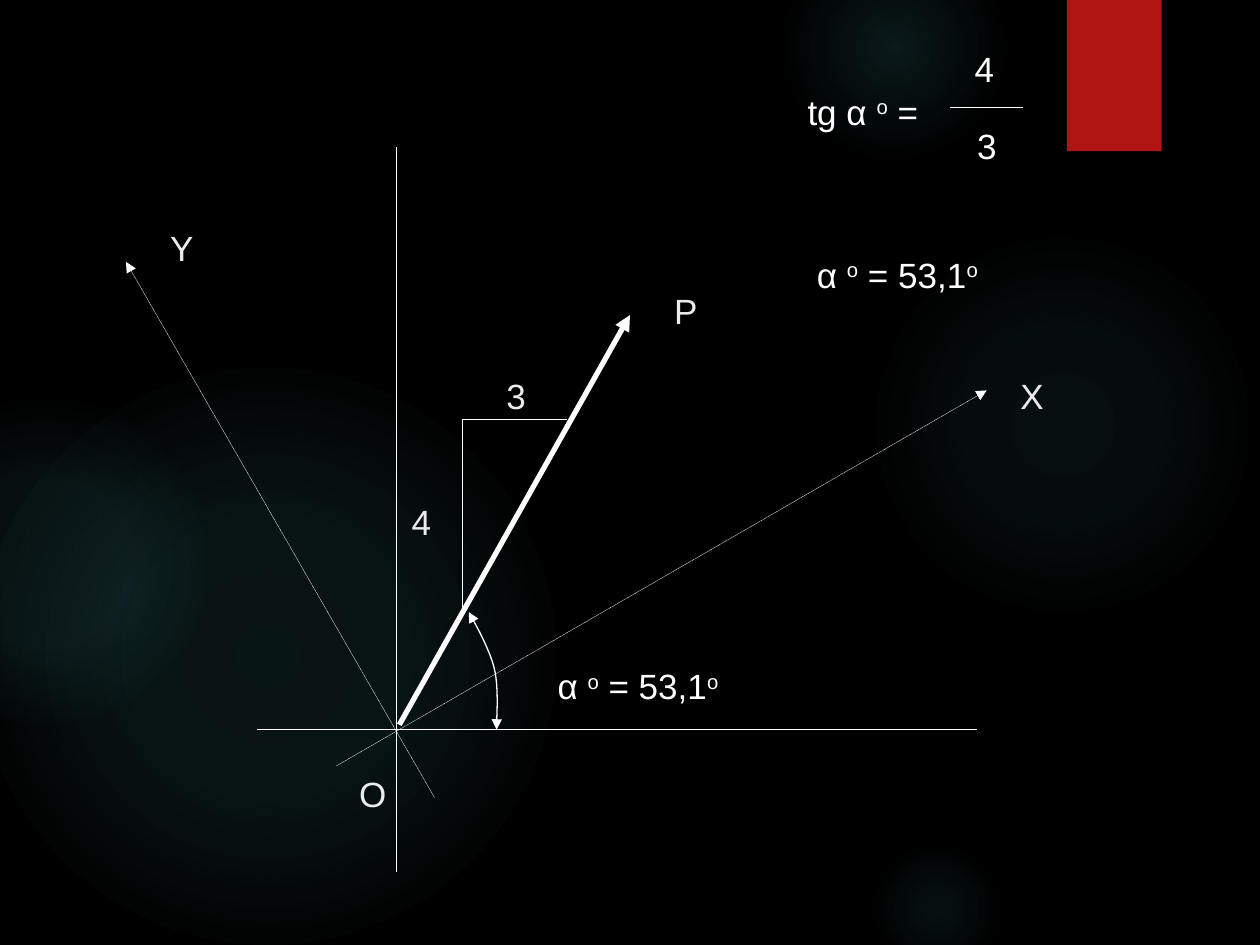
from dataclasses import dataclass

from pptx import Presentation
from pptx.dml.color import RGBColor
from pptx.enum.dml import MSO_LINE
from pptx.enum.shapes import MSO_CONNECTOR, MSO_SHAPE
from pptx.enum.text import MSO_AUTO_SIZE, PP_ALIGN
from pptx.oxml import parse_xml
from pptx.oxml.ns import nsdecls, qn
from pptx.slide import Slide
from pptx.util import Cm, Pt
from lxml.etree import SubElement

COLORS = {
    "background": "000000",
    "glow": "50B9C1",
    "ribbon": "B01513",
    "line": "FFFFFF",
    "formula": "FFFFFF",
    "label": "EBEBEB",
}
FONT = "Arial"
TEXT_HEIGHT = 1.09
ARC_STEPS = 12


@dataclass(frozen=True)
class Glow:
    left: float
    top: float
    diameter: float
    center_alpha: int
    middle_alpha: int
    edge: int


@dataclass(frozen=True)
class Line:
    start: tuple[float, float]
    end: tuple[float, float]
    width: float = 0.75
    dotted: bool = False
    head: bool = False
    tail: bool = False


@dataclass(frozen=True)
class Label:
    text: str
    left: float
    top: float
    width: float = 1.27
    color: str = "label"


GLOWS = [
    Glow(17.5, 4.65, 7.82, 7, 6, 69),
    Glow(15.8, -1.27, 4.45, 14, 7, 73),
    Glow(17.5, 16.94, 2.74, 9, 5, 66),
    Glow(-0.43, 7.42, 11.63, 11, 10, 75),
    Glow(-2.34, 8.05, 6.55, 8, 8, 72),
]

LINES = [
    Line((2.54, 5.28), (8.76, 16.08), width=0.25, dotted=True, head=True),
    Line((6.78, 15.44), (19.89, 7.87), width=0.25, dotted=True, tail=True),
    Line((8.05, 14.61), (12.7, 6.35), width=3, tail=True),
    Line((11.43, 8.46), (9.32, 8.46)),
    Line((9.32, 8.46), (9.32, 12.27)),
    Line((8, 2.97), (8, 17.58)),
    Line((5.18, 14.71), (19.69, 14.71)),
    Line((19.15, 2.16), (20.62, 2.16)),
]

LABELS = [
    Label("X", 20.32, 7.42),
    Label("P", 13.34, 5.72),
    Label("Y", 3.18, 4.45),
    Label("4", 8.05, 9.96),
    Label("3", 9.96, 7.42),
    Label("O", 6.99, 15.44),
    Label("tg α ^o^ =", 16.03, 1.7, 4.01, "formula"),
    Label("4", 19.4, 0.84, 1.7, "formula"),
    Label("3", 19.45, 2.39, 1.7, "formula"),
    Label("α ^o^ = 53,1^o", 16.22, 4.98, 4.01, "formula"),
    Label("α ^o^ = 53,1^o", 10.99, 13.28, 4.01, "formula"),
]

ARC_CURVES = [
    ((9.45, 12.34), (9.55, 12.52), (9.86, 13.06), (9.96, 13.46)),
    ((9.96, 13.46), (10.06, 13.84), (10.01, 14.43), (10.01, 14.71)),
]


def color(name: str) -> RGBColor:
    return RGBColor.from_string(COLORS[name])


def add_glow(slide: Slide, glow: Glow) -> None:
    shape = slide.shapes.add_shape(
        MSO_SHAPE.OVAL, Cm(glow.left), Cm(glow.top), Cm(glow.diameter), Cm(glow.diameter)
    )
    shape.shadow.inherit = False
    shape.line.fill.background()
    shape.fill.background()
    stops = "".join(
        f'<a:gs pos="{position * 1000}"><a:srgbClr val="{COLORS["glow"]}">'
        f'<a:alpha val="{alpha * 1000}"/></a:srgbClr></a:gs>'
        for position, alpha in ((0, glow.center_alpha), (36, glow.middle_alpha), (glow.edge, 0))
    )
    gradient = parse_xml(
        f'<a:gradFill {nsdecls("a")} rotWithShape="1"><a:gsLst>{stops}</a:gsLst>'
        '<a:path path="circle"><a:fillToRect l="50000" t="50000" r="50000" b="50000"/>'
        "</a:path></a:gradFill>"
    )
    properties = shape._element.spPr
    properties.replace(properties.find(qn("a:noFill")), gradient)


def add_ribbon(slide: Slide) -> None:
    shape = slide.shapes.add_shape(MSO_SHAPE.RECTANGLE, Cm(21.51), 0, Cm(1.91), Cm(3.05))
    shape.shadow.inherit = False
    shape.fill.solid()
    shape.fill.fore_color.rgb = color("ribbon")
    shape.line.fill.background()


def format_line(shape, width: float, dotted=False, head=False, tail=False) -> None:
    shape.line.color.rgb = color("line")
    shape.line.width = Pt(width)
    if dotted:
        shape.line.dash_style = MSO_LINE.ROUND_DOT
    for tag, wanted in (("a:headEnd", head), ("a:tailEnd", tail)):
        if wanted:
            SubElement(shape.line._get_or_add_ln(), qn(tag), type="triangle")


def add_line(slide: Slide, line: Line) -> None:
    connector = slide.shapes.add_connector(
        MSO_CONNECTOR.STRAIGHT, *(Cm(value) for value in line.start + line.end)
    )
    format_line(connector, line.width, line.dotted, line.head, line.tail)
    SubElement(connector._element.spPr, qn("a:effectLst"))


def curve_point(curve, t: float) -> tuple[int, int]:
    weights = ((1 - t) ** 3, 3 * t * (1 - t) ** 2, 3 * t**2 * (1 - t), t**3)
    x, y = (sum(w * point[axis] for w, point in zip(weights, curve)) for axis in (0, 1))
    return Cm(x), Cm(y)


def add_arc(slide: Slide) -> None:
    points = [
        curve_point(curve, step / ARC_STEPS)
        for curve in ARC_CURVES
        for step in range(1, ARC_STEPS + 1)
    ]
    builder = slide.shapes.build_freeform(*curve_point(ARC_CURVES[0], 0))
    builder.add_line_segments(points, close=False)
    shape = builder.convert_to_shape()
    shape.shadow.inherit = False
    shape.fill.background()
    format_line(shape, 0.75, head=True, tail=True)


def add_text(slide: Slide, text: str, *, left: float, top: float, width: float,
             color_name: str, size: float = 20) -> None:
    box = slide.shapes.add_textbox(Cm(left), Cm(top), Cm(width), Cm(TEXT_HEIGHT))
    frame = box.text_frame
    frame.word_wrap = True
    frame.auto_size = MSO_AUTO_SIZE.SHAPE_TO_FIT_TEXT
    paragraph = frame.paragraphs[0]
    paragraph.alignment = PP_ALIGN.JUSTIFY
    for index, part in enumerate(text.split("^")):
        run = paragraph.add_run()
        run.text = part
        run.font.name = FONT
        run.font.size = Pt(size)
        run.font.color.rgb = color(color_name)
        if index % 2:
            run._r.get_or_add_rPr().set("baseline", "30000")


def main() -> None:
    presentation = Presentation()
    presentation.slide_width, presentation.slide_height = Cm(25.4), Cm(19.05)
    slide = presentation.slides.add_slide(presentation.slide_layouts[6])
    slide.background.fill.solid()
    slide.background.fill.fore_color.rgb = color("background")
    for glow in GLOWS:
        add_glow(slide, glow)
    add_ribbon(slide)
    for line in LINES:
        add_line(slide, line)
    add_arc(slide)
    for label in LABELS:
        add_text(slide, label.text, left=label.left, top=label.top,
                 width=label.width, color_name=label.color)
    presentation.save("out.pptx")


if __name__ == "__main__":
    main()
